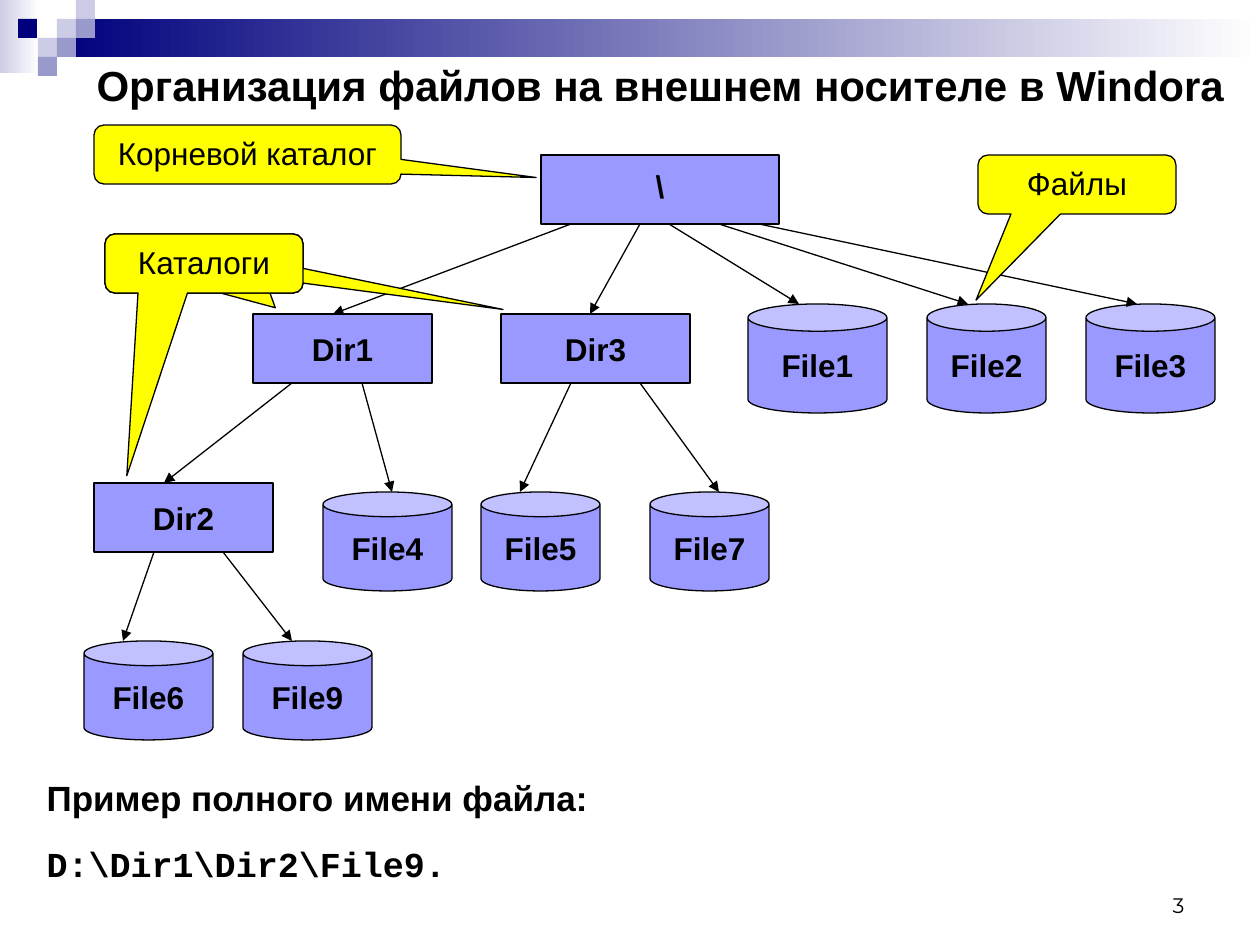
import pptx
import pptx.util
import pptx.dml.color
import pptx.enum.shapes
import pptx.enum.text
import pptx.oxml

RGB = pptx.dml.color.RGBColor
Pt = pptx.util.Pt
KIND = pptx.enum.shapes.MSO_SHAPE
ALIGN = pptx.enum.text.PP_ALIGN
ANCHOR = pptx.enum.text.MSO_ANCHOR

PX = 7257  # EMU per px, 126 px to the inch
BLACK = RGB(0x00, 0x00, 0x00)
WHITE = RGB(0xFF, 0xFF, 0xFF)
NAVY = RGB(0x00, 0x00, 0x7D)
PALE = RGB(0xCC, 0xCC, 0xE6)
MID = RGB(0x99, 0x99, 0xCC)
LILAC = RGB(0x99, 0x99, 0xFF)
YELLOW = RGB(0xFF, 0xFF, 0x00)

deck = pptx.Presentation()
deck.slide_width, deck.slide_height = 1260 * PX, 945 * PX
slide = deck.slides.add_slide(deck.slide_layouts[1])
shapes = slide.shapes


def write(shape, *lines, size=18, font="Arial", bold=False, align=ALIGN.CENTER,
          anchor=ANCHOR.MIDDLE, wrap=True):
    frame = shape.text_frame
    frame.auto_size = pptx.enum.text.MSO_AUTO_SIZE.NONE
    frame.word_wrap = wrap
    frame.vertical_anchor = anchor
    frame.text = "\n".join(lines)
    for para in frame.paragraphs:
        para.alignment = align
        para.font.size = Pt(size)
        para.font.name = font
        para.font.bold = bold
        para.font.color.rgb = BLACK


def draw(kind, x, y, w, h, fill, line=None):
    shape = shapes.add_shape(kind, x * PX, y * PX, w * PX, h * PX)
    shape.shadow.inherit = False
    shape.fill.solid()
    shape.fill.fore_color.rgb = fill
    if line is None:
        shape.line.fill.background()
    else:
        shape.line.color.rgb = line
        shape.line.width = Pt(0.75)
    return shape


# Header bands fading to white
for x, y, w, h, tint in [(0, 0, 39, 73, PALE), (57, 19, 1203, 38, NAVY)]:
    fill = draw(KIND.RECTANGLE, x, y, w, h, tint).fill
    fill.gradient()
    fill.gradient_angle = 0
    for stop, end, tone in zip(fill.gradient_stops, (0, 1), (tint, WHITE)):
        stop.position = end
        stop.color.rgb = tone

# Header squares
for x, y, tint in [(57, 19, PALE), (76, 0, PALE), (76, 19, MID), (38, 38, PALE),
                   (18, 19, NAVY), (57, 38, MID), (38, 57, MID)]:
    draw(KIND.RECTANGLE, x, y, 19, 19, tint)

# Title
title = shapes.title
title.left, title.top, title.width, title.height = 84 * PX, 55 * PX, 1176 * PX, 59 * PX
write(title, "Организация файлов на внешнем носителе в Windora",
      size=24, bold=True, align=ALIGN.LEFT)

# Example of a full file name
body = slide.placeholders[1]
body.left, body.top, body.width, body.height = 34 * PX, 770 * PX, 1191 * PX, 139 * PX
write(body, "Пример полного имени файла:", "D:\\Dir1\\Dir2\\File9.",
      size=20, bold=True, align=ALIGN.LEFT, anchor=ANCHOR.TOP)
for para in body.text_frame.paragraphs:
    para.space_before = Pt(4)
    props = para._p.get_or_add_pPr()
    props.set("marL", str(47 * PX))
    props.set("indent", str(-47 * PX))
    props.insert_element_before(pptx.oxml.parse_xml(
        '<a:buNone xmlns:a="http://schemas.openxmlformats.org/drawingml/2006/main"/>'),
        "a:tabLst", "a:defRPr", "a:extLst")
para.line_spacing = 1.4
para.font.name = "Courier New"

# Slide number
page = shapes.add_textbox(903 * PX, 861 * PX, 294 * PX, 63 * PX)
write(page, "3", size=12, font="Montserrat", align=ALIGN.RIGHT, anchor=ANCHOR.BOTTOM)

# Root and directories
for name, x, y, w in [("\\", 541, 155, 238), ("Dir1", 253, 314, 179),
                      ("Dir3", 501, 314, 189), ("Dir2", 94, 483, 179)]:
    node = draw(KIND.RECTANGLE, x, y, w, 69, LILAC, BLACK)
    write(node, name, bold=True, wrap=False)
    if name == "\\":
        node.text_frame.paragraphs[0].line_spacing = 0.8

# Files, one row per level
rows = [
    (304, 109, [("File1", 748, 139), ("File2", 927, 119), ("File3", 1086, 129)]),
    (492, 99, [("File4", 323, 129), ("File5", 481, 119), ("File7", 650, 119)]),
    (641, 99, [("File6", 84, 129), ("File9", 243, 129)]),
]
for y, h, files in rows:
    for name, x, w in files:
        node = draw(KIND.CAN, x, y, w, h, LILAC, BLACK)
        write(node, name, bold=True, wrap=False)

# Arrows from parent to child
arrows = [
    (759, 224, 1137, 304), (719, 224, 968, 304), (669, 224, 799, 304),
    (640, 224, 590, 314), (571, 224, 333, 314),
    (571, 383, 520, 492), (640, 383, 719, 492),
    (292, 383, 164, 483), (362, 383, 392, 492),
    (154, 552, 123, 641), (223, 552, 292, 641),
]
for ends in arrows:
    arrow = shapes.add_connector(pptx.enum.shapes.MSO_CONNECTOR.STRAIGHT,
                                 *[n * PX for n in ends])
    arrow.line.color.rgb = BLACK
    arrow.line.width = Pt(0.75)
    for part, xml in [
        (arrow.line._get_or_add_ln(), '<a:tailEnd type="triangle" xmlns:a='),
        (arrow._element.spPr, '<a:effectLst xmlns:a='),
    ]:
        part.append(pptx.oxml.parse_xml(
            xml + '"http://schemas.openxmlformats.org/drawingml/2006/main"/>'))

# Callouts, each with the offset of its tip
for text, x, y, w, across, down in [
    ("Корневой каталог", 94, 125, 307, 0.94, 0.39),
    ("Каталоги", 105, 234, 198, 0.36, 0.75),
    ("Каталоги", 105, 234, 198, 1.51, 0.78),
    ("Каталоги", 105, 234, 198, -0.39, 3.6),
    ("Файлы", 978, 155, 198, -0.51, 1.96),
]:
    note = draw(KIND.ROUNDED_RECTANGULAR_CALLOUT, x, y, w, 59, YELLOW, BLACK)
    note.adjustments[0] = across
    note.adjustments[1] = down
    write(note, text, anchor=ANCHOR.TOP)

deck.save("out.pptx")
